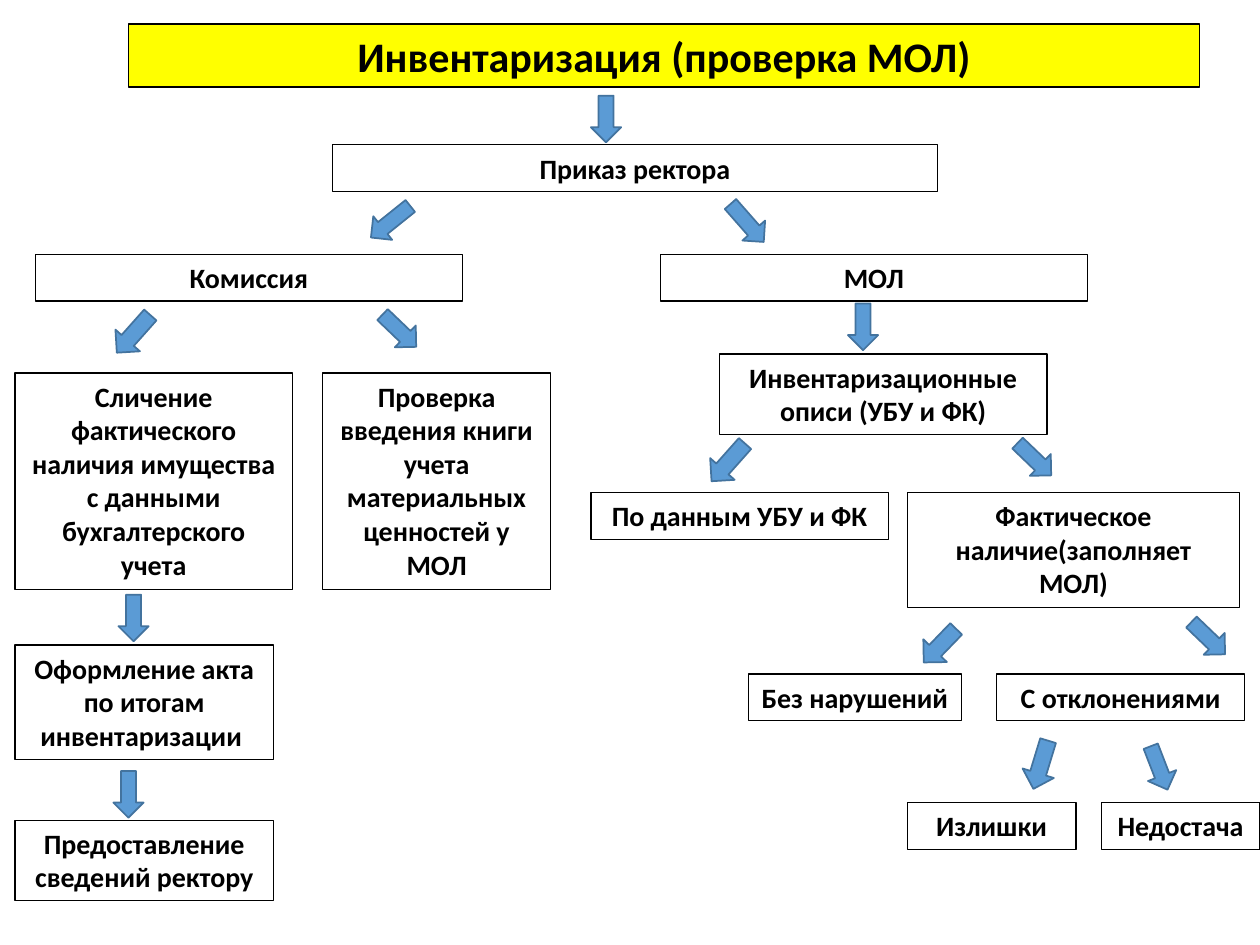
from pptx import Presentation
from pptx.dml.color import RGBColor
from pptx.enum.shapes import MSO_SHAPE as Shape
from pptx.enum.text import MSO_ANCHOR as Anchor, MSO_AUTO_SIZE as AutoSize, PP_ALIGN as Align
from pptx.util import Inches, Pt

BLACK = RGBColor(0x00, 0x00, 0x00)
YELLOW = RGBColor(0xFF, 0xFF, 0x00)
BLUE = RGBColor(0x5B, 0x9B, 0xD5)
DARK_BLUE = RGBColor(0x43, 0x73, 0x9E)

# Box heights for one, two, three and six lines of text
ONE, TWO, THREE, SIX = 0.37, 0.64, 0.91, 1.72

# Text, left, top, width, height
ORDER_BOXES = [
    ("Приказ ректора", 2.64, 1.15, 4.8, ONE),
    ("Комиссия", 0.28, 2.02, 3.39, ONE),
    ("МОЛ", 5.24, 2.02, 3.39, ONE),
]
COMMISSION_BOXES = [
    ("Сличение фактического наличия имущества с данными бухгалтерского учета",
     0.12, 2.96, 2.2, SIX),
    ("Проверка введения книги учета материальных ценностей у МОЛ",
     2.56, 2.96, 1.81, SIX),
    ("Оформление акта по итогам инвентаризации ", 0.12, 5.12, 2.05, THREE),
    ("Предоставление сведений ректору", 0.12, 6.51, 2.05, TWO),
]
CUSTODIAN_BOXES = [
    ("Инвентаризационные описи (УБУ и ФК)", 5.71, 2.81, 2.6, TWO),
    ("По данным УБУ и ФК", 4.69, 3.91, 2.36, ONE),
    ("Фактическое наличие(заполняет МОЛ)", 7.2, 3.91, 2.64, THREE),
    ("Без нарушений", 5.94, 5.35, 1.69, ONE),
    ("С отклонениями", 7.91, 5.35, 1.97, ONE),
    ("Излишки", 7.2, 6.37, 1.34, ONE),
    ("Недостача", 8.74, 6.37, 1.26, ONE),
]

# Left, top, width, height, rotation
ORDER_ARROWS = [
    (4.69, 0.76, 0.24, 0.37, 0),
    (2.98, 1.56, 0.24, 0.4, 51.3),
    (5.81, 1.57, 0.24, 0.4, 318.7),
]
COMMISSION_ARROWS = [
    (0.93, 2.45, 0.26, 0.4, 41.6),
    (3.05, 2.44, 0.24, 0.37, 313.8),
    (0.94, 4.72, 0.24, 0.37, 0),
    (0.9, 6.12, 0.24, 0.37, 0),
]
CUSTODIAN_ARROWS = [
    (6.73, 2.41, 0.24, 0.37, 0),
    (5.65, 3.47, 0.26, 0.4, 41.6),
    (8.09, 3.46, 0.24, 0.37, 313.8),
    (7.33, 4.94, 0.26, 0.37, 44),
    (9.47, 4.88, 0.24, 0.37, 313.8),
    (8.13, 5.87, 0.26, 0.4, 16.9),
    (9.08, 5.91, 0.24, 0.37, 338.9),
]


def write_text(shape, text, size=16, color=BLACK, bold=True, font="Calibri"):
    frame = shape.text_frame
    frame.word_wrap = True
    frame.auto_size = AutoSize.SHAPE_TO_FIT_TEXT
    frame.vertical_anchor = Anchor.TOP
    para = frame.paragraphs[0]
    para.alignment = Align.CENTER
    span = para.add_run()
    span.text = text
    span.font.name = font
    span.font.size = Pt(size)
    span.font.bold = bold
    span.font.color.rgb = color


def add_figure(page, kind, bounds, fill, line, line_width):
    shape = page.shapes.add_shape(kind, *map(Inches, bounds))
    shape.shadow.inherit = False
    if fill is None:
        shape.fill.background()
    else:
        shape.fill.solid()
        shape.fill.fore_color.rgb = fill
    shape.line.color.rgb = line
    shape.line.width = Pt(line_width)
    return shape


def add_box(page, text, bounds, fill=None, size=16):
    box = add_figure(page, Shape.RECTANGLE, bounds, fill, BLACK, 0.75)
    write_text(box, text, size=size)


def add_arrow(page, bounds, rotation):
    arrow = add_figure(page, Shape.DOWN_ARROW, bounds, BLUE, DARK_BLUE, 1)
    arrow.rotation = rotation


def add_branch(page, boxes, arrows):
    for text, *bounds in boxes:
        add_box(page, text, bounds)
    for *bounds, rotation in arrows:
        add_arrow(page, bounds, rotation)


def main():
    deck = Presentation()
    deck.slide_width, deck.slide_height = Inches(10), Inches(7.5)
    page = deck.slides.add_slide(deck.slide_layouts[6])
    add_box(page, "Инвентаризация (проверка МОЛ)", (1.02, 0.19, 8.5, 0.5),
            fill=YELLOW, size=24)
    add_branch(page, ORDER_BOXES, ORDER_ARROWS)
    add_branch(page, COMMISSION_BOXES, COMMISSION_ARROWS)
    add_branch(page, CUSTODIAN_BOXES, CUSTODIAN_ARROWS)
    deck.save("out.pptx")


if __name__ == "__main__":
    main()
